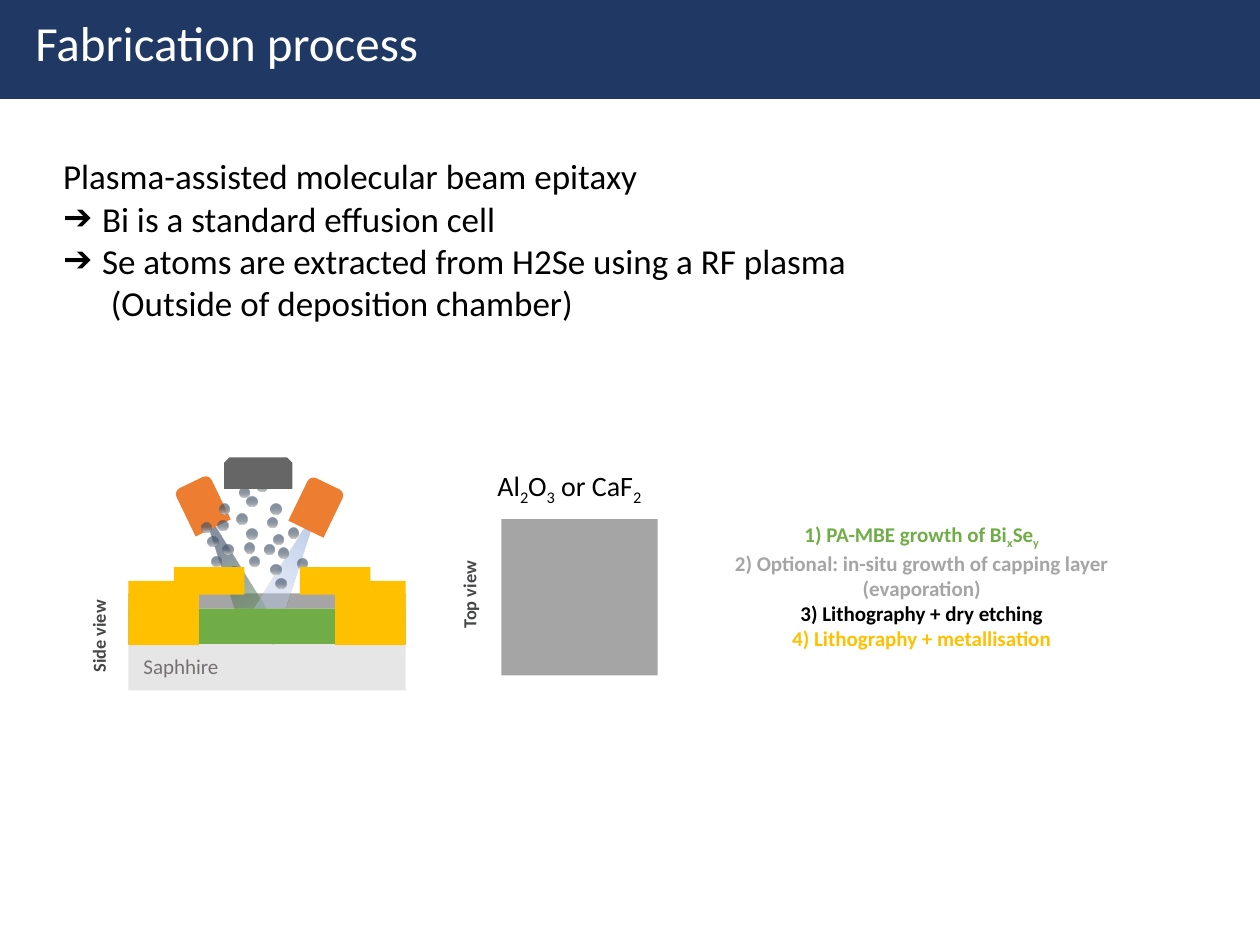
"""Build the fabrication process slide."""
from lxml import etree
from pptx import Presentation
from pptx.dml.color import RGBColor
from pptx.enum.shapes import MSO_SHAPE
from pptx.enum.text import MSO_ANCHOR, MSO_AUTO_SIZE, PP_ALIGN
from pptx.oxml.ns import qn
from pptx.util import Inches, Pt

RECT, OVAL = MSO_SHAPE.RECTANGLE, MSO_SHAPE.OVAL
TRIANGLE = MSO_SHAPE.ISOSCELES_TRIANGLE
ROUNDED, SNIPPED = MSO_SHAPE.ROUND_2_SAME_RECTANGLE, MSO_SHAPE.SNIP_2_SAME_RECTANGLE
LEFT, CENTER = PP_ALIGN.LEFT, PP_ALIGN.CENTER
TOP, MIDDLE = MSO_ANCHOR.TOP, MSO_ANCHOR.MIDDLE
NO_FIT = MSO_AUTO_SIZE.NONE

FONT = "Calibri"
NAVY, GREEN, GREY, GOLD = "203864", "70AD47", "A5A5A5", "FFC000"
ORANGE, SLATE, BLACK, WHITE = "ED7D31", "44546A", "000000", "FFFFFF"

ATOM_SIZE = 0.08
ATOMS = [
    (1.9, 3.87), (2.15, 4), (2.04, 3.82), (1.74, 4), (1.88, 4.08), (1.73, 4.13),
    (1.96, 3.94), (2.12, 4.11), (1.96, 4.2), (1.6, 4.15), (1.77, 4.32), (1.65, 4.26),
    (2.17, 4.24), (2.29, 4.19), (2.21, 4.35), (1.94, 4.31), (2.1, 4.32), (1.98, 4.42),
    (1.68, 4.42), (1.85, 4.59), (1.82, 4.5), (2.15, 4.48), (2.36, 4.43), (2.19, 4.59),
]
LAYERS = {"sapphire": (5.1, 0.38, "E7E6E6"), "capping": (4.71, 0.12, GREY),
          "film": (4.83, 0.28, GREEN)}
STEPS = [
    ("1) PA-MBE growth of Bi|x|Se|y", GREEN),
    ("2) Optional: in-situ growth of capping layer (evaporation)", GREY),
    ("3) Lithography + dry etching", BLACK),
    ("4) Lithography + metallisation", GOLD),
]
METHOD = [
    ("Plasma-assisted molecular beam epitaxy", 0, None),
    ("Bi is a standard effusion cell", 0.31, "➔"),
    ("Se atoms are extracted from H2Se using a RF plasma", 0.31, "➔"),
    ("(Outside of deposition chamber)", 0.38, None),
]


def rgb(color):
    """Turn a hex string into a colour."""
    return RGBColor.from_string(color)


def apply(target, **values):
    """Set each named attribute on the target."""
    for name, value in values.items():
        setattr(target, name, value)


def place(shape, left, top, width, height):
    """Move and size a shape in inches."""
    apply(shape, left=Inches(left), top=Inches(top),
          width=Inches(width), height=Inches(height))


def add_part(shapes, kind, box, color=None, rotation=0):
    """Add an unlined shape, filled when a colour is given."""
    part = shapes.add_shape(kind, *map(Inches, box))
    part.shadow.inherit = False
    part.line.fill.background()
    part.rotation = rotation
    if color:
        part.fill.solid()
        part.fill.fore_color.rgb = rgb(color)
    return part


def fade(part, start, end, angle):
    """Fill with a gradient of two (colour, opacity percent) stops."""
    part.fill.gradient()
    part.fill.gradient_angle = angle
    for stop, position, (color, _) in zip(part.fill.gradient_stops, (0, 0.6), (start, end)):
        stop.position = position
        stop.color.rgb = rgb(color)
    for node, (_, opacity) in zip(part.fill._xPr.iter(qn("a:srgbClr")), (start, end)):
        etree.SubElement(node, qn("a:alpha"), val=str(opacity * 1000))


def write(paragraph, text, size, color, bold=False, align=LEFT):
    """Write text in which every second piece between bars is a subscript."""
    apply(paragraph, alignment=align, space_before=Pt(0))
    for index, piece in enumerate(text.split("|")):
        run = paragraph.add_run()
        run.text = piece
        apply(run.font, name=FONT, size=Pt(size), bold=bold)
        run.font.color.rgb = rgb(color)
        if index % 2:
            run._r.get_or_add_rPr().set("baseline", "-25000")


def add_label(slide, box, lines, size, bold=False, align=LEFT, rotation=0, wrap=True):
    """Add a text box of (text, colour) lines."""
    label = slide.shapes.add_textbox(*map(Inches, box))
    label.rotation = rotation
    frame = label.text_frame
    frame.word_wrap = wrap
    for index, (text, color) in enumerate(lines):
        paragraph = frame.add_paragraph() if index else frame.paragraphs[0]
        write(paragraph, text, size, color, bold, align)


def add_method(body):
    """Fill the body placeholder with the growth method."""
    place(body, 0.4, 1.18, 8.89, 1.45)
    frame = body.text_frame
    apply(frame, auto_size=NO_FIT, vertical_anchor=TOP, word_wrap=True)
    for index, (text, indent, bullet) in enumerate(METHOD):
        paragraph = frame.add_paragraph() if index else frame.paragraphs[0]
        properties = paragraph._p.get_or_add_pPr()
        properties.set("marL", str(Inches(indent)))
        properties.set("indent", str(-Inches(indent) if bullet else 0))
        if bullet:
            etree.SubElement(properties, qn("a:buFont"), typeface=FONT)
            etree.SubElement(properties, qn("a:buChar"), char=bullet)
        else:
            etree.SubElement(properties, qn("a:buNone"))
        write(paragraph, text, 20, BLACK)


def add_header(slide):
    """Add the banner and raise the title above it."""
    banner = add_part(slide.shapes, RECT, (0, 0, 10, 0.78), NAVY)
    banner.line.color.rgb = rgb(NAVY)
    banner.line.width = Pt(1)
    title = slide.shapes.title
    place(title, 0.18, 0.03, 9.03, 0.6)
    apply(title.text_frame, auto_size=NO_FIT, vertical_anchor=MIDDLE, word_wrap=True)
    write(title.text_frame.paragraphs[0], "Fabrication process", 28, WHITE)
    banner._element.addnext(title._element)


def add_layer(shapes, name):
    """Add one full-width layer of the sample."""
    top, height, color = LAYERS[name]
    add_part(shapes, RECT, (1.02, top, 2.2, height), color)


def add_side_view(slide):
    """Draw the layered sample under the effusion cells."""
    shapes = slide.shapes
    add_layer(shapes, "sapphire")
    add_layer(shapes, "capping")
    bismuth = add_part(shapes, TRIANGLE, (1.69, 3.93, 0.29, 1.17), rotation=335.1)
    fade(bismuth, (GREEN, 44), (SLATE, 63), 90)
    selenium = add_part(shapes, TRIANGLE, (2.14, 3.94, 0.29, 1.17), rotation=24.9)
    fade(selenium, ("4472C4", 47), ("B4C7E7", 41), 270)
    add_part(shapes, ROUNDED, (1.45, 3.81, 0.31, 0.4), ORANGE, 334.1)
    add_part(shapes, ROUNDED, (2.36, 3.82, 0.31, 0.4), ORANGE, 25.9)
    add_layer(shapes, "film")
    vapour = shapes.add_group_shape()
    for left, top in ATOMS:
        atom = add_part(vapour.shapes, OVAL, (left, top, ATOM_SIZE, ATOM_SIZE))
        fade(atom, ("C9C9C9", 100), (SLATE, 63), 90)
    add_part(shapes, SNIPPED, (1.78, 3.63, 0.54, 0.25), "666666")
    for base, ledge in ((1.02, 1.38), (2.66, 2.38)):
        add_part(shapes, RECT, (base, 4.61, 0.56, 0.51), GOLD)
        add_part(shapes, RECT, (ledge, 4.5, 0.56, 0.22), GOLD)
    add_label(slide, (1.04, 5.14, 0.84, 0.3), [("Saphhire", "767171")], 12)


def add_top_view(slide):
    """Draw the capped sample from above with its material."""
    add_part(slide.shapes, RECT, (3.98, 4.12, 1.24, 1.24), GREY)
    add_label(slide, (3.85, 3.67, 1.5, 0.37), [("Al|2|O|3| or CaF|2", BLACK)], 16)


def main():
    """Build and save the slide."""
    deck = Presentation()
    apply(deck, slide_width=Inches(10), slide_height=Inches(7.5))
    slide = deck.slides.add_slide(deck.slide_layouts[1])
    add_side_view(slide)
    add_top_view(slide)
    for text, box in (("Top view", (3.31, 4.58, 0.83, 0.28)),
                      ("Side view", (0.36, 4.91, 0.85, 0.28))):
        add_label(slide, box, [(text, "464749")], 10.5, True, CENTER, 270, False)
    add_label(slide, (5.62, 4.09, 3.39, 1.11), STEPS, 12, True, CENTER)
    add_header(slide)
    add_method(slide.placeholders[1])
    deck.save("out.pptx")


if __name__ == "__main__":
    main()
